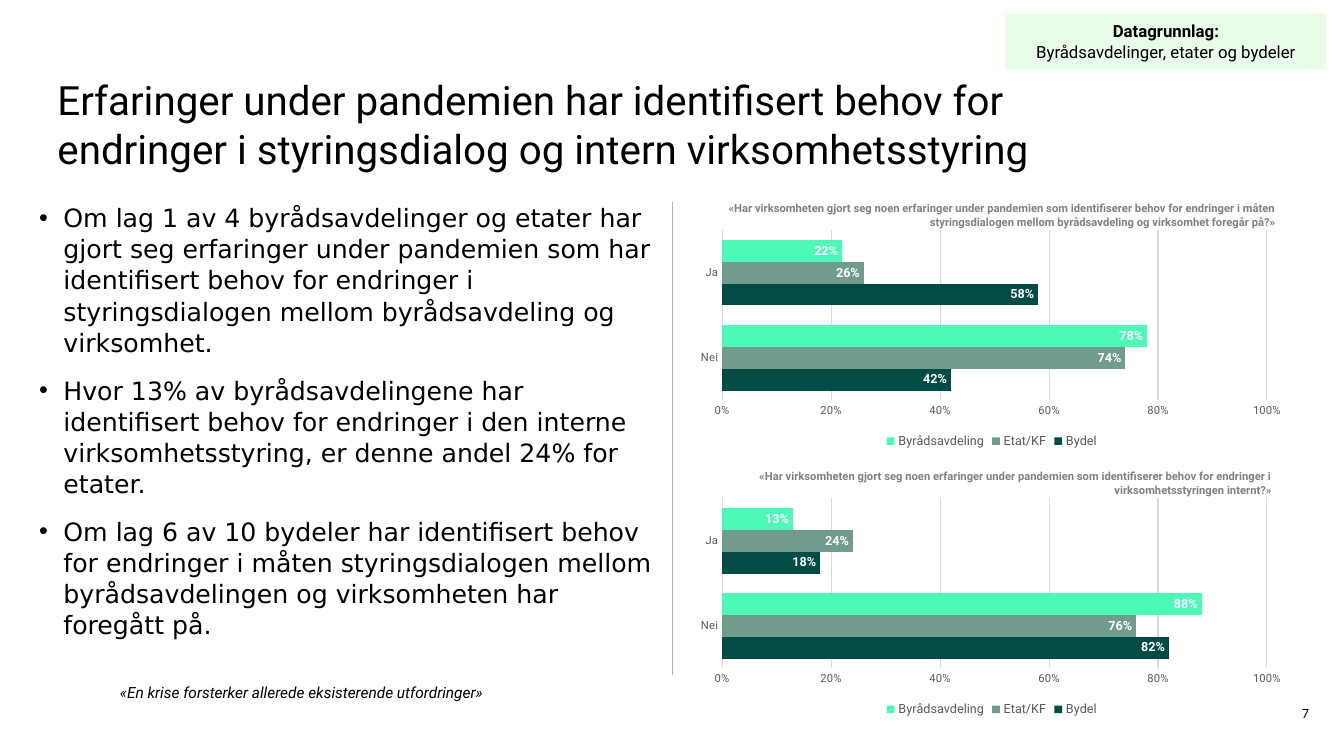
from lxml import etree
from pptx import Presentation
from pptx.chart.data import CategoryChartData
from pptx.dml.color import RGBColor
from pptx.enum.chart import XL_CHART_TYPE as ChartType, XL_LABEL_POSITION as LabelPos
from pptx.enum.chart import XL_LEGEND_POSITION as LegendPos, XL_TICK_MARK as Tick
from pptx.enum.shapes import MSO_CONNECTOR as Connector, MSO_SHAPE as Shape
from pptx.enum.text import MSO_ANCHOR as Anchor, MSO_AUTO_SIZE as AutoSize, PP_ALIGN as Align
from pptx.oxml import parse_xml
from pptx.oxml.ns import nsdecls, qn
from pptx.util import Pt

SERIES_COLORS = {"Bydel": "034B45", "Etat/KF": "719C8C", "Byrådsavdeling": "4EF8B6"}
PLOT_AREA = {"x": 0.054, "y": 0.02, "w": 0.901, "h": 0.75}


def color(value):
    return RGBColor.from_string(value)


def set_font(font, size, value="000000", name="Roboto", bold=False, italic=False):
    font.size, font.name, font.bold, font.italic = Pt(size), name, bold, italic
    font.color.rgb = color(value)


def place(sp, box):
    sp.left, sp.top, sp.width, sp.height = (Pt(v) for v in box)


def set_frame(tf, margin=0, anchor=Anchor.TOP):
    tf.word_wrap, tf.auto_size, tf.vertical_anchor = True, AutoSize.NONE, anchor
    tf.margin_left = tf.margin_top = tf.margin_right = tf.margin_bottom = Pt(margin)


def add_text(s, box, text, size, align=Align.LEFT, anchor=Anchor.TOP, **style):
    sp = s.shapes.add_textbox(*(Pt(v) for v in box))
    set_frame(sp.text_frame, anchor=anchor)
    p = sp.text_frame.paragraphs[0]
    p.text, p.alignment = text, align
    set_font(p.runs[0].font, size, **style)


def add_title(s, box, text):
    sp = s.shapes.title
    place(sp, box)
    set_frame(sp.text_frame)
    p = sp.text_frame.paragraphs[0]
    p.text, p.alignment = text, Align.LEFT
    set_font(p.runs[0].font, 28.8)


def add_bullets(s, box, texts):
    sp = s.placeholders[1]
    place(sp, box)
    tf = sp.text_frame
    tf.text = "\n".join(texts)
    set_frame(tf)
    for i, p in enumerate(tf.paragraphs):
        pPr = p._p.get_or_add_pPr()
        pPr.set("marL", str(Pt(17.3)))
        pPr.set("indent", str(-Pt(17.3)))
        etree.SubElement(pPr, qn("a:buChar")).set("char", "•")
        p.space_before, p.line_spacing = Pt(12 if i else 0), 1.03
        set_font(p.runs[0].font, 18, name="DejaVu Sans")


def add_divider(s, x, top, bottom):
    line = s.shapes.add_connector(Connector.STRAIGHT, Pt(x), Pt(top), Pt(x), Pt(bottom))
    line.line.color.rgb, line.line.width = color("B1B2B3"), Pt(0.5)
    etree.SubElement(line._element.spPr, qn("a:effectLst"))


def add_source_tag(s, box, heading, detail):
    sp = s.shapes.add_shape(Shape.RECTANGLE, *(Pt(v) for v in box))
    sp.shadow.inherit = False
    sp.fill.solid()
    sp.fill.fore_color.rgb = color("E9FBE9")
    sp.line.fill.background()
    set_frame(sp.text_frame, 5.7, Anchor.MIDDLE)
    p = sp.text_frame.paragraphs[0]
    p.alignment = Align.CENTER
    r = p.add_run()
    r.text = heading
    set_font(r.font, 12, bold=True)
    p.add_line_break()
    r = p.add_run()
    r.text = detail
    set_font(r.font, 12)


def format_axes(chart):
    cat, val = chart.category_axis, chart.value_axis
    for axis in (cat, val):
        axis.major_tick_mark = axis.minor_tick_mark = Tick.NONE
        set_font(axis.tick_labels.font, 8, "595959")
    cat.format.line.color.rgb, cat.format.line.width = color("D9D9D9"), Pt(0.75)
    val.format.line.fill.background()
    val.minimum_scale, val.maximum_scale, val.major_unit = 0, 1, 0.2
    val.tick_labels.number_format, val.tick_labels.number_format_is_linked = "0%", False
    grid = val.major_gridlines.format.line
    grid.color.rgb, grid.width = color("D9D9D9"), Pt(0.75)


def set_plot_layout(chart):
    parts = "".join(f'<c:{k}Mode val="edge"/>' for k in "xy")
    parts += "".join(f'<c:{k} val="{v}"/>' for k, v in PLOT_AREA.items())
    layout = parse_xml(f'<c:layout {nsdecls("c")}><c:manualLayout>'
                       f'<c:layoutTarget val="inner"/>{parts}</c:manualLayout></c:layout>')
    area = chart._chartSpace.chart.plotArea
    for old in area.findall(qn("c:layout")):
        area.remove(old)
    area.insert(0, layout)


def add_question(s, box, title_right, question, values):
    """Question text above a bar chart that fills the rest of the box."""
    left, top, width, height = box
    add_text(s, (title_right - 428.4, top, 428.4, 19.4), question, 8, Align.RIGHT,
             value="808080", bold=True)
    data = CategoryChartData(number_format="0%")
    data.categories = ["Nei", "Ja"]
    for name, vals in zip(SERIES_COLORS, values):
        data.add_series(name, vals)
    chart = s.shapes.add_chart(ChartType.BAR_CLUSTERED, Pt(left), Pt(top + 17.3),
                               Pt(width), Pt(height - 17.3), data).chart
    set_font(chart.font, 10)
    chart.has_title = False
    chart.has_legend = True
    chart.legend.position, chart.legend.include_in_layout = LegendPos.BOTTOM, False
    set_font(chart.legend.font, 9, "595959")
    format_axes(chart)
    set_plot_layout(chart)

    # Bars and their labels
    plot = chart.plots[0]
    plot.gap_width, plot.overlap, plot.vary_by_categories = 90, 0, False
    for series in plot.series:
        series.format.fill.solid()
        series.format.fill.fore_color.rgb = color(SERIES_COLORS[series.name])
        labels = series.data_labels
        labels.show_value, labels.position = True, LabelPos.INSIDE_END
        labels.number_format, labels.number_format_is_linked = "0%", False
        set_font(labels.font, 9, "FFFFFF", bold=True)


def main():
    prs = Presentation()
    prs.slide_width, prs.slide_height = Pt(960), Pt(540)
    s = prs.slides.add_slide(prs.slide_layouts[1])

    # Heading
    add_title(s, (41, 54, 803, 103), "Erfaringer under pandemien har identifisert behov for "
              "endringer i styringsdialog og intern virksomhetsstyring")
    add_source_tag(s, (718, 9.4, 229.7, 40.3), "Datagrunnlag:",
                   "Byrådsavdelinger, etater og bydeler")

    # Left column
    add_bullets(s, (28, 144, 438, 326), [
        "Om lag 1 av 4 byrådsavdelinger og etater har gjort seg erfaringer under pandemien som "
        "har identifisert behov for endringer i styringsdialogen mellom byrådsavdeling og "
        "virksomhet.",
        "Hvor 13% av byrådsavdelingene har identifisert behov for endringer i den interne "
        "virksomhetsstyring, er denne andel 24% for etater.",
        "Om lag 6 av 10 bydeler har identifisert behov for endringer i måten styringsdialogen "
        "mellom byrådsavdelingen og virksomheten har foregått på.",
    ])
    add_text(s, (85.7, 488, 322.6, 13.7),
             "«En krise forsterker allerede eksisterende utfordringer»", 11, italic=True)
    add_divider(s, 480, 144, 482.4)

    # Right column
    intro = ("«Har virksomheten gjort seg noen erfaringer under pandemien som identifiserer "
             "behov for endringer i ")
    questions = [
        (911.5, "måten styringsdialogen mellom byrådsavdeling og virksomhet foregår på?»",
         [(0.42, 0.58), (0.74, 0.26), (0.78, 0.22)]),
        (908.6, "virksomhetsstyringen internt?»",
         [(0.82, 0.18), (0.76, 0.24), (0.88, 0.13)]),
    ]
    for i, (title_right, ending, values) in enumerate(questions):
        add_question(s, (492.5, 144 + 191.5 * i, 432, 179.3), title_right,
                     intro + ending, values)

    # Page number
    add_text(s, (905, 495.4, 55, 28.8), "7", 9, Align.CENTER, Anchor.MIDDLE, name="Lato")
    prs.save("out.pptx")


if __name__ == "__main__":
    main()
